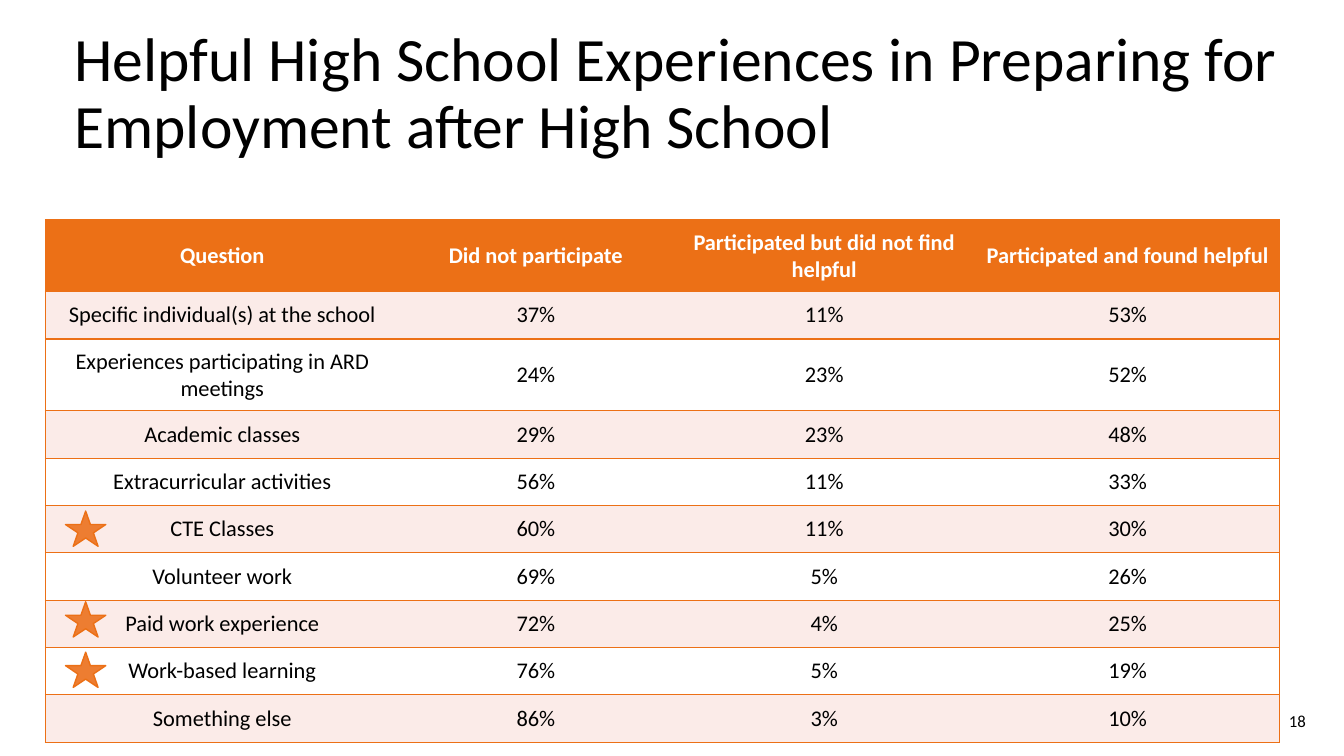
from dataclasses import dataclass

from lxml import etree
from pptx import Presentation
from pptx.dml.color import RGBColor
from pptx.enum import shapes, text
from pptx.oxml import ns
from pptx.util import Inches, Pt


@dataclass(frozen=True)
class Theme:
    font: str = "Calibri"
    black: str = "000000"
    white: str = "FFFFFF"
    orange: str = "EC7016"
    band: str = "FBEBE8"
    star: str = "ED7D31"
    title_size: int = 44
    table_size: int = 16
    number_size: int = 12
    line_width: int = 1


THEME = Theme()
COLUMN_WIDTHS = (3.51, 2.71, 3.01, 3.01)
HEADER_HEIGHT, ROW_HEIGHT = 0.63, 0.47
STAR_TOPS = (5.07, 5.97, 6.47)
EXPERIENCES = (
    ("Question", "Did not participate", "Participated but did not find helpful",
     "Participated and found helpful"),
    ("Specific individual(s) at the school", "37%", "11%", "53%"),
    ("Experiences participating in ARD meetings", "24%", "23%", "52%"),
    ("Academic classes", "29%", "23%", "48%"),
    ("Extracurricular activities", "56%", "11%", "33%"),
    ("CTE Classes", "60%", "11%", "30%"),
    ("Volunteer work", "69%", "5%", "26%"),
    ("Paid work experience", "72%", "4%", "25%"),
    ("Work-based learning", "76%", "5%", "19%"),
    ("Something else", "86%", "3%", "10%"),
)


def style_paragraph(paragraph, size, color, align, bold=False):
    paragraph.alignment = align
    font = paragraph.font
    font.name, font.size, font.bold = THEME.font, Pt(size), bold
    font.color.rgb = RGBColor.from_string(color)


def add_text(slide, content, left, top, width, height, size, align, spacing=1.0):
    box = slide.shapes.add_textbox(Inches(left), Inches(top), Inches(width), Inches(height))
    frame = box.text_frame
    frame.word_wrap = True
    frame.vertical_anchor = text.MSO_ANCHOR.MIDDLE
    paragraph = frame.paragraphs[0]
    paragraph.text = content
    paragraph.line_spacing = spacing
    style_paragraph(paragraph, size, THEME.black, align)


def set_borders(cell, visible_sides):
    """Draw the named sides (L, R, T, B) in orange and hide the others."""
    properties = cell._tc.get_or_add_tcPr()
    for side in "LRTB":
        line = etree.SubElement(properties, ns.qn(f"a:ln{side}"), w=str(Pt(THEME.line_width)))
        if side in visible_sides:
            fill = etree.SubElement(line, ns.qn("a:solidFill"))
            etree.SubElement(fill, ns.qn("a:srgbClr"), val=THEME.orange)
        else:
            etree.SubElement(line, ns.qn("a:noFill"))


def fill_cell(cell, content, fill, color, bold, visible_sides):
    set_borders(cell, visible_sides)
    cell.fill.solid()
    cell.fill.fore_color.rgb = RGBColor.from_string(fill)
    cell.vertical_anchor = text.MSO_ANCHOR.MIDDLE
    cell.margin_left = cell.margin_right = Inches(0.09)
    cell.margin_top = cell.margin_bottom = Inches(0.09)
    cell.text = content
    style_paragraph(cell.text_frame.paragraphs[0], THEME.table_size, color,
                    text.PP_ALIGN.CENTER, bold)


def add_experience_table(slide, left, top):
    row_count, column_count = len(EXPERIENCES), len(COLUMN_WIDTHS)
    height = HEADER_HEIGHT + ROW_HEIGHT * (row_count - 1)
    table = slide.shapes.add_table(
        row_count, column_count, Inches(left), Inches(top),
        Inches(sum(COLUMN_WIDTHS)), Inches(height)).table
    table.horz_banding = False
    for column, width in zip(table.columns, COLUMN_WIDTHS):
        column.width = Inches(width)
    for row_index, values in enumerate(EXPERIENCES):
        header = row_index == 0
        table.rows[row_index].height = Inches(HEADER_HEIGHT if header else ROW_HEIGHT)
        band = THEME.band if row_index % 2 else THEME.white
        fill = THEME.orange if header else band
        color = THEME.white if header else THEME.black
        for column_index, value in enumerate(values):
            sides = "TB"
            if column_index == 0:
                sides += "L"
            if column_index == column_count - 1:
                sides += "R"
            fill_cell(table.cell(row_index, column_index), value, fill, color, header, sides)


def add_star(slide, left, top):
    star = slide.shapes.add_shape(shapes.MSO_SHAPE.STAR_5_POINT, Inches(left), Inches(top),
                                  Inches(0.4), Inches(0.35))
    star.shadow.inherit = False
    star.fill.solid()
    star.fill.fore_color.rgb = RGBColor.from_string(THEME.star)
    star.line.color.rgb = RGBColor.from_string(THEME.orange)
    star.line.width = Pt(THEME.line_width)


def main():
    presentation = Presentation()
    presentation.slide_width, presentation.slide_height = Inches(13.33), Inches(7.5)
    slide = presentation.slides.add_slide(presentation.slide_layouts[6])
    add_text(slide, "Helpful High School Experiences in Preparing for Employment after High School",
             0.64, 0.27, 12.14, 1.35, THEME.title_size, text.PP_ALIGN.LEFT, 0.9)
    add_text(slide, "18", 9.55, 6.95, 3.5, 0.4, THEME.number_size, text.PP_ALIGN.RIGHT)
    add_experience_table(slide, 0.45, 2.18)
    for top in STAR_TOPS:
        add_star(slide, 0.65, top)
    presentation.save("out.pptx")


if __name__ == "__main__":
    main()
